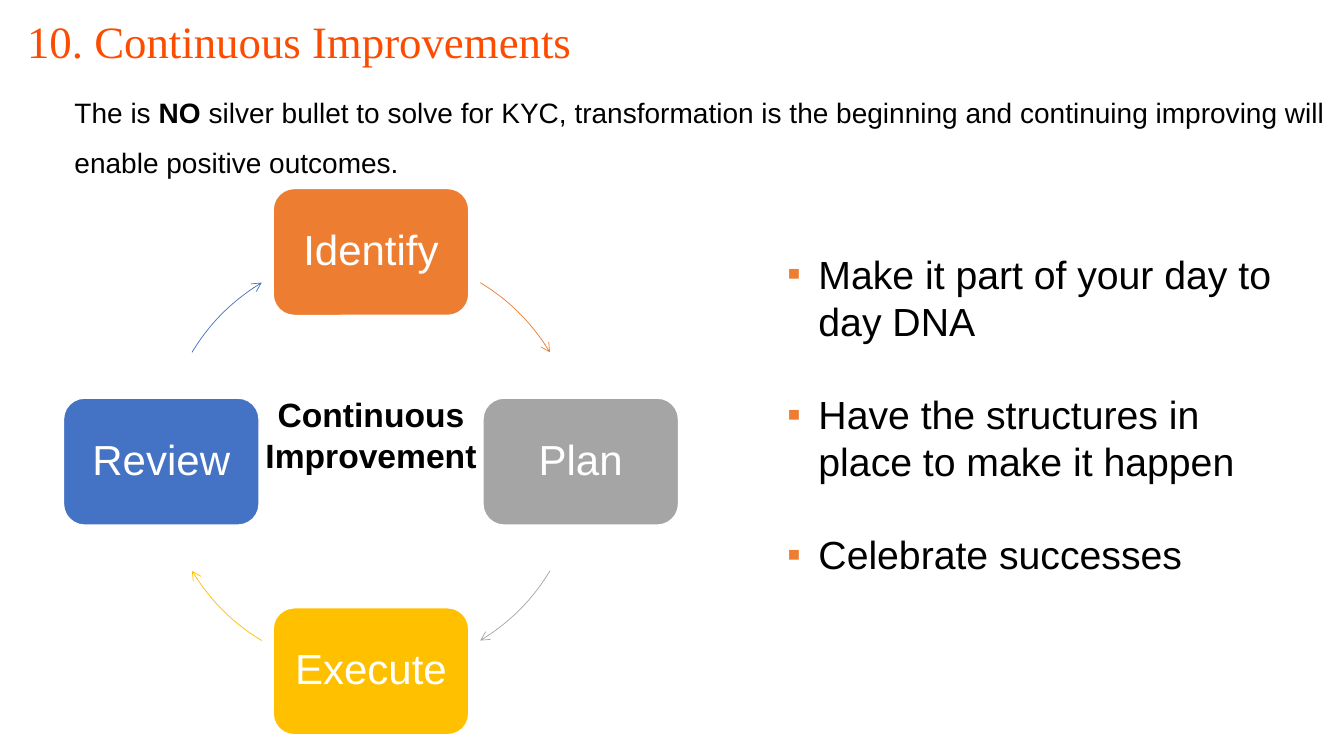
from lxml import etree
from pptx import Presentation
from pptx.dml.color import RGBColor
from pptx.enum.shapes import MSO_SHAPE as SHAPE
from pptx.enum.text import MSO_ANCHOR as ANCHOR, PP_ALIGN as ALIGN
from pptx.oxml.ns import qn
from pptx.util import Inches, Pt

# Content
TITLE = "10. Continuous Improvements"
INTRO = [
    ("The is ", False),
    ("NO", True),
    (" silver bullet to solve for KYC, transformation is the beginning and "
     "continuing improving will enable positive outcomes.", False),
]
HUB = "Continuous Improvement"
# Stage, colour, direction from the centre of the cycle (x, y)
STAGES = [
    ("Identify", "orange", (0, -1)),
    ("Plan", "gray", (1, 0)),
    ("Execute", "gold", (0, 1)),
    ("Review", "blue", (-1, 0)),
]
BULLETS = [
    "Make it part of your day to day DNA",
    "Have the structures in place to make it happen",
    "Celebrate successes",
]
COLORS = {
    "title": "FC4C02", "black": "000000", "white": "FFFFFF",
    "orange": "ED7D31", "gray": "A5A5A5", "gold": "FFC000", "blue": "4472C4",
}

# Cycle geometry, in inches and degrees
CENTER_X, CENTER_Y, RADIUS = 3.68, 4.58, 2.08
BOX_W, BOX_H = 1.94, 1.26
ARC_HALF = 13.6
ADJ_PER_DEGREE = 0.6


def rgb(name):
    return RGBColor.from_string(COLORS[name])


def add_run(p, text, size, color="black", font="Arial", bold=False):
    r = p.add_run()
    r.text = text
    r.font.name, r.font.size, r.font.bold = font, Pt(size), bold
    r.font.color.rgb = rgb(color)


def add_text(slide, box, anchor=ANCHOR.TOP):
    tf = slide.shapes.add_textbox(*map(Inches, box)).text_frame
    tf.word_wrap = True
    tf.vertical_anchor = anchor
    return tf


def add_bullet(p, color):
    pPr = p._p.get_or_add_pPr()
    pPr.set("marL", str(Inches(0.31)))
    pPr.set("indent", str(-Inches(0.31)))
    bu_clr = etree.SubElement(pPr, qn("a:buClr"))
    etree.SubElement(bu_clr, qn("a:srgbClr"), val=COLORS[color])
    etree.SubElement(pPr, qn("a:buFont"), typeface="Arial")
    etree.SubElement(pPr, qn("a:buChar"), char="▪")


def add_stage(slide, name, color, direction):
    left = CENTER_X + RADIUS * direction[0] - BOX_W / 2
    top = CENTER_Y + RADIUS * direction[1] - BOX_H / 2
    sp = slide.shapes.add_shape(SHAPE.ROUNDED_RECTANGLE,
                                *map(Inches, (left, top, BOX_W, BOX_H)))
    sp.shadow.inherit = False
    sp.fill.solid()
    sp.fill.fore_color.rgb = rgb(color)
    sp.line.color.rgb = rgb("white")
    sp.line.width = Pt(1)
    tf = sp.text_frame
    tf.word_wrap = True
    tf.vertical_anchor = ANCHOR.MIDDLE
    p = tf.paragraphs[0]
    p.alignment, p.line_spacing = ALIGN.CENTER, 0.9
    add_run(p, name, 30, "white")


def add_arc_arrow(slide, color, middle):
    box = (CENTER_X - RADIUS, CENTER_Y - RADIUS, 2 * RADIUS, 2 * RADIUS)
    sp = slide.shapes.add_shape(SHAPE.ARC, *map(Inches, box))
    sp.shadow.inherit = False
    sp.adjustments[0] = (middle - ARC_HALF) * ADJ_PER_DEGREE
    sp.adjustments[1] = (middle + ARC_HALF) * ADJ_PER_DEGREE
    sp.fill.background()
    sp.line.color.rgb = rgb(color)
    sp.line.width = Pt(0.5)
    etree.SubElement(sp.line._get_or_add_ln(), qn("a:tailEnd"), type="arrow")


prs = Presentation()
prs.slide_width, prs.slide_height = Inches(13.33), Inches(7.5)
slide = prs.slides.add_slide(prs.slide_layouts[6])

# Title
p = add_text(slide, (0.17, 0.15, 12.86, 0.97)).paragraphs[0]
p.line_spacing = 0.9
add_run(p, TITLE, 32, "title", "Times New Roman")

# Introduction
p = add_text(slide, (0.64, 0.41, 12.69, 1.42), ANCHOR.BOTTOM).paragraphs[0]
p.line_spacing = 1.5
for text, bold in INTRO:
    add_run(p, text, 20, bold=bold)

# Cycle: each stage is followed by the arrow to the next one
for i, (name, color, direction) in enumerate(STAGES):
    add_stage(slide, name, color, direction)
    add_arc_arrow(slide, color, (315 + 90 * i) % 360)

# Centre of the cycle
p = add_text(slide, (2.48, 3.27, 2.4, 2.08), ANCHOR.MIDDLE).paragraphs[0]
p.alignment = ALIGN.CENTER
add_run(p, HUB, 24, bold=True)

# Bullets
tf = add_text(slide, (7.71, 2.43, 5.06, 5.07))
for i, text in enumerate(BULLETS):
    p = tf.add_paragraph() if i else tf.paragraphs[0]
    if i:
        p.space_before = Pt(33)
    add_bullet(p, "orange")
    add_run(p, text, 28)

prs.save("out.pptx")
